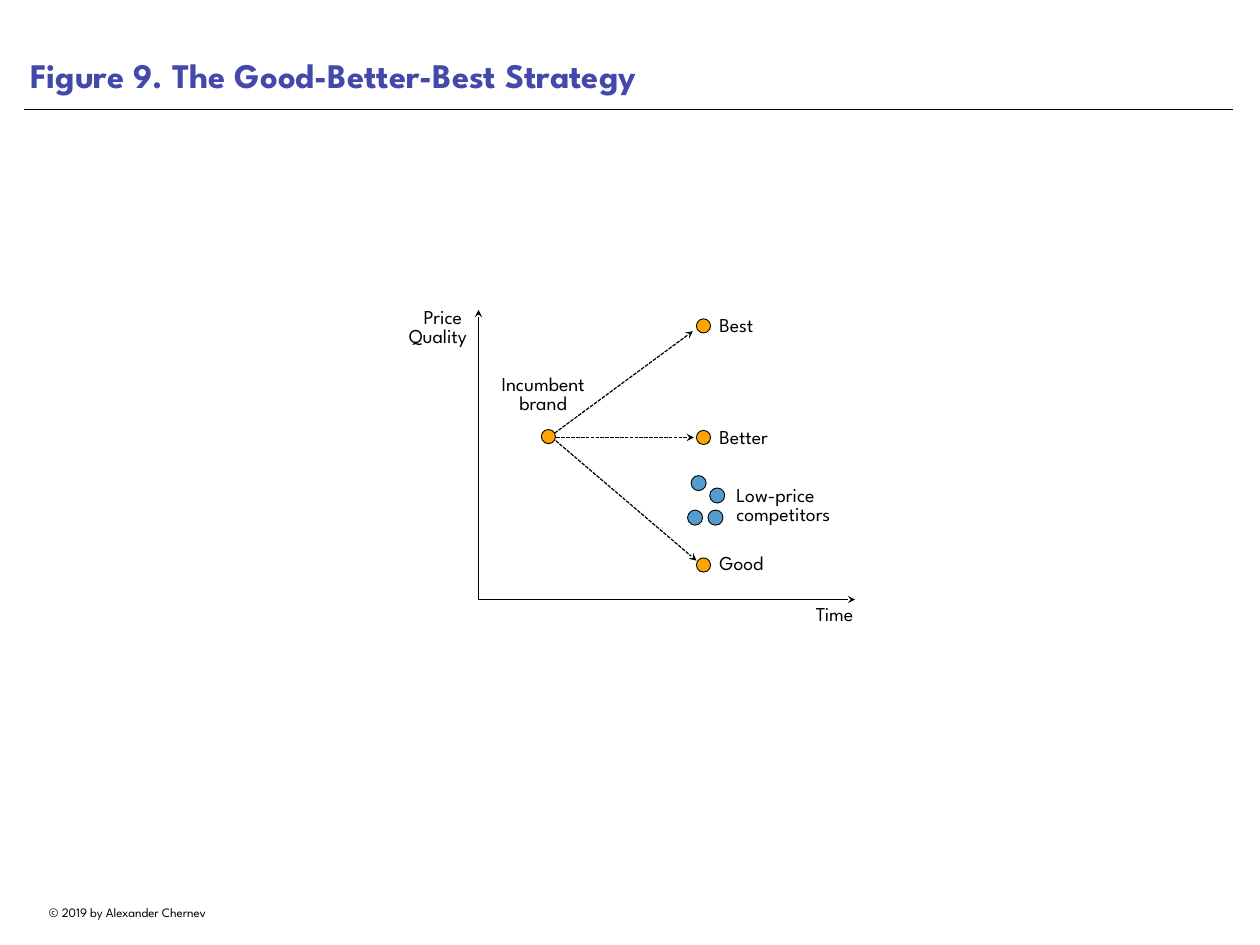
from dataclasses import dataclass

from lxml.etree import SubElement
from pptx import Presentation
from pptx.dml.color import RGBColor
from pptx.enum.dml import MSO_LINE_DASH_STYLE as Dash
from pptx.enum.shapes import MSO_CONNECTOR as Connector, MSO_SHAPE as Shape
from pptx.enum.text import MSO_ANCHOR as Anchor, PP_ALIGN as Align
from pptx.oxml.ns import qn
from pptx.slide import Slide
from pptx.text.text import TextFrame
from pptx.util import Inches, Pt


@dataclass(frozen=True)
class Theme:
    font: str = "League Spartan"
    ink: str = "000000"
    heading: str = "4349AA"
    brand: str = "FFA400"
    competitor: str = "549CCF"
    title_size: float = 28
    label_size: float = 16
    credit_size: float = 10.5


@dataclass(frozen=True)
class Label:
    text: str
    left: float
    top: float
    width: float
    height: float
    align: Align = Align.LEFT
    anchor: Anchor = Anchor.MIDDLE


@dataclass(frozen=True)
class Line:
    start: tuple[float, float]
    end: tuple[float, float]
    weight: float = 1
    arrow: bool = True
    dashed: bool = False


@dataclass(frozen=True)
class Dot:
    left: float
    top: float
    size: float
    color: str


THEME = Theme()
ORIGIN = (5.4, 6.77)
BRAND_LEFT = 7.86
LEVEL_LEFT = 8.12

RULE = Line((0.27, 1.24), (13.92, 1.24), weight=0.5, arrow=False)
AXES = [Line(ORIGIN, (5.4, 3.5)), Line(ORIGIN, (9.65, 6.77))]
PATHS = [
    Line((6.26, 4.89), (7.82, 3.74), dashed=True),
    Line((6.23, 4.94), (7.86, 6.33), dashed=True),
    Line((6.28, 4.94), (7.83, 4.94), dashed=True),
]
COMPETITORS = [
    Dot(left, top, 0.17, THEME.competitor)
    for left, top in [(7.8, 5.37), (8.01, 5.51), (7.76, 5.76), (7.99, 5.76)]
]
BRANDS = [Dot(6.11, 4.85, 0.16, THEME.brand)] + [
    Dot(BRAND_LEFT, top, 0.16, THEME.brand) for top in (3.6, 4.86, 6.3)
]
LABELS = [
    Label("Price \nQuality", 4.41, 3.49, 0.86, 0.67, Align.RIGHT, Anchor.TOP),
    Label("Time", 8.91, 6.85, 0.72, 0.41, Align.RIGHT, Anchor.TOP),
    Label("Incumbent brand", 5.4, 4.13, 1.46, 0.67, Align.CENTER),
    Label("Low-price competitors", 8.31, 5.46, 1.46, 0.52),
    Label("Best", LEVEL_LEFT, 3.48, 0.55, 0.41),
    Label("Better", LEVEL_LEFT, 4.77, 0.87, 0.38),
    Label("Good", LEVEL_LEFT, 6.2, 0.87, 0.36),
]


def write_text(
    frame: TextFrame,
    text: str,
    *,
    size: float,
    color: str = THEME.ink,
    bold: bool = False,
    align: Align = Align.LEFT,
    anchor: Anchor = Anchor.TOP,
    spacing: float = 1.0,
    inset: tuple[float, float] = (0, 0),
    wrap: bool = True,
) -> None:
    frame.word_wrap = wrap
    frame.vertical_anchor = anchor
    frame.margin_left = frame.margin_right = Inches(inset[0])
    frame.margin_top = frame.margin_bottom = Inches(inset[1])
    for index, words in enumerate(text.split("\n")):
        para = frame.add_paragraph() if index else frame.paragraphs[0]
        para.alignment = align
        para.line_spacing = spacing
        span = para.add_run()
        span.text = words
        span.font.name = THEME.font
        span.font.size = Pt(size)
        span.font.bold = bold
        span.font.color.rgb = RGBColor.from_string(color)


def draw_title(page: Slide, text: str) -> None:
    title = page.shapes.title
    title.left, title.top = Inches(0.27), Inches(0)
    title.width, title.height = Inches(13.64), Inches(1.15)
    write_text(title.text_frame, text, size=THEME.title_size, color=THEME.heading,
               bold=True, anchor=Anchor.BOTTOM, inset=(0.07, 0.07))


def draw_credit(page: Slide, text: str) -> None:
    box = page.shapes.add_textbox(Inches(0.27), Inches(10.16), Inches(2.34), Inches(0.28))
    write_text(box.text_frame, text, size=THEME.credit_size, align=Align.CENTER,
               inset=(0.1, 0.05), wrap=False)


def draw_label(page: Slide, label: Label) -> None:
    box = page.shapes.add_textbox(Inches(label.left), Inches(label.top),
                                  Inches(label.width), Inches(label.height))
    write_text(box.text_frame, label.text, size=THEME.label_size, align=label.align,
               anchor=label.anchor, spacing=0.8)


def draw_line(page: Slide, line: Line) -> None:
    connector = page.shapes.add_connector(
        Connector.STRAIGHT, *map(Inches, line.start + line.end))
    connector.line.color.rgb = RGBColor.from_string(THEME.ink)
    connector.line.width = Pt(line.weight)
    if line.dashed:
        connector.line.dash_style = Dash.SQUARE_DOT
    properties = connector.element.spPr
    if line.arrow:
        SubElement(properties.find(qn("a:ln")), qn("a:tailEnd"), type="stealth")
    SubElement(properties, qn("a:effectLst"))


def draw_dot(page: Slide, dot: Dot) -> None:
    circle = page.shapes.add_shape(Shape.OVAL, Inches(dot.left), Inches(dot.top),
                                   Inches(dot.size), Inches(dot.size))
    circle.shadow.inherit = False
    circle.fill.solid()
    circle.fill.fore_color.rgb = RGBColor.from_string(dot.color)
    circle.line.color.rgb = RGBColor.from_string(THEME.ink)
    circle.line.width = Pt(0.75)


def main() -> None:
    deck = Presentation()
    deck.slide_width, deck.slide_height = Inches(14.22), Inches(10.67)
    page = deck.slides.add_slide(deck.slide_layouts.get_by_name("Title Only"))
    draw_title(page, "Figure 9. The Good-Better-Best Strategy")
    draw_credit(page, "© 2019 by Alexander Chernev")
    for line in [RULE, *AXES, *PATHS]:
        draw_line(page, line)
    for dot in COMPETITORS + BRANDS:
        draw_dot(page, dot)
    for label in LABELS:
        draw_label(page, label)
    deck.save("out.pptx")


if __name__ == "__main__":
    main()
